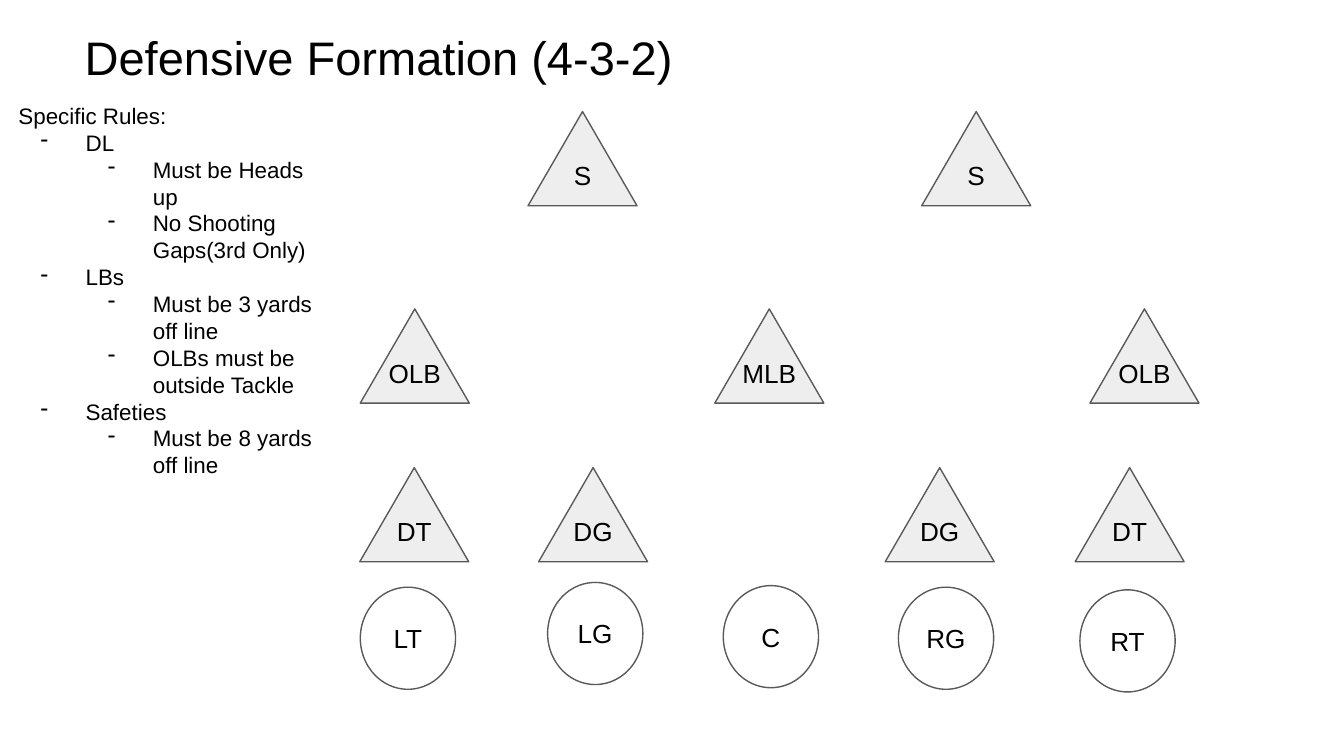
from typing import NamedTuple

import pptx
import pptx.dml.color
import pptx.enum.shapes
import pptx.enum.text
import pptx.oxml
import pptx.oxml.ns
import pptx.util
from pptx.util import Cm

COLORS = {"text": "000000", "outline": "595959", "defender": "EEEEEE"}
FONT = "Arial"
INSET = Cm(0.25)
DEFENDER_WIDTH, DEFENDER_HEIGHT = 2.06, 1.78
LABEL_WIDTH, LABEL_HEIGHT = 1.73, 1.12
LINEMAN_WIDTH, LINEMAN_HEIGHT = 1.8, 1.93


class Player(NamedTuple):
    label: str
    left: float
    top: float


class Rule(NamedTuple):
    text: str
    level: int  # 0 heading, 1 position, 2 requirement


SAFETY_TOP, LINEBACKER_TOP, LINE_TOP = 2.11, 5.84, 8.84
DEFENDERS = [
    Player("S", 9.98, SAFETY_TOP),
    Player("S", 17.42, SAFETY_TOP),
    Player("OLB", 6.81, LINEBACKER_TOP),
    Player("MLB", 13.51, LINEBACKER_TOP),
    Player("OLB", 20.6, LINEBACKER_TOP),
    Player("DT", 6.8, LINE_TOP),
    Player("DG", 10.18, LINE_TOP),
    Player("DG", 16.73, LINE_TOP),
    Player("DT", 20.32, LINE_TOP),
]
LINEMEN = [
    Player("LT", 6.81, 11.1),
    Player("LG", 10.35, 11.01),
    Player("C", 13.67, 11.07),
    Player("RG", 16.98, 11.1),
    Player("RT", 20.41, 11.15),
]
RULES = [
    Rule("Specific Rules:", 0),
    Rule("DL", 1),
    Rule("Must be Heads up", 2),
    Rule("No Shooting Gaps(3rd Only)", 2),
    Rule("LBs", 1),
    Rule("Must be 3 yards off line", 2),
    Rule("OLBs must be outside Tackle", 2),
    Rule("Safeties", 1),
    Rule("Must be 8 yards off line", 2),
]


def color(name: str) -> pptx.dml.color.RGBColor:
    return pptx.dml.color.RGBColor.from_string(COLORS[name])


def style_paragraph(paragraph, size: float, centered: bool = False) -> None:
    paragraph.font.name = FONT
    paragraph.font.size = pptx.util.Pt(size)
    paragraph.font.color.rgb = color("text")
    if centered:
        paragraph.alignment = pptx.enum.text.PP_ALIGN.CENTER


def prepare_frame(shape, anchor):
    frame = shape.text_frame
    frame.word_wrap = True
    frame.vertical_anchor = anchor
    frame.margin_left = frame.margin_right = INSET
    frame.margin_top = frame.margin_bottom = INSET
    return frame


def add_text_box(slide, left: float, top: float, width: float, height: float,
                 anchor=pptx.enum.text.MSO_ANCHOR.TOP):
    box = slide.shapes.add_textbox(Cm(left), Cm(top), Cm(width), Cm(height))
    return prepare_frame(box, anchor)


def add_outlined_shape(slide, kind, player: Player, width: float, height: float):
    shape = slide.shapes.add_shape(
        kind, Cm(player.left), Cm(player.top), Cm(width), Cm(height))
    shape.shadow.inherit = False
    shape.line.color.rgb = color("outline")
    shape.line.width = pptx.util.Pt(0.75)
    return shape


def add_defender(slide, player: Player) -> None:
    triangle = add_outlined_shape(
        slide, pptx.enum.shapes.MSO_SHAPE.FLOWCHART_EXTRACT, player,
        DEFENDER_WIDTH, DEFENDER_HEIGHT)
    triangle.fill.solid()
    triangle.fill.fore_color.rgb = color("defender")
    frame = add_text_box(
        slide, player.left + (DEFENDER_WIDTH - LABEL_WIDTH) / 2,
        player.top + DEFENDER_HEIGHT - LABEL_HEIGHT, LABEL_WIDTH, LABEL_HEIGHT)
    frame.text = player.label
    style_paragraph(frame.paragraphs[0], 14, centered=True)


def add_lineman(slide, player: Player) -> None:
    circle = add_outlined_shape(
        slide, pptx.enum.shapes.MSO_SHAPE.OVAL, player,
        LINEMAN_WIDTH, LINEMAN_HEIGHT)
    circle.fill.background()
    frame = prepare_frame(circle, pptx.enum.text.MSO_ANCHOR.MIDDLE)
    frame.text = player.label
    style_paragraph(frame.paragraphs[0], 14, centered=True)


def add_dash(paragraph, level: int) -> None:
    properties = paragraph._p.get_or_add_pPr()
    properties.set("marL", str(Cm(1.27 * level)))
    properties.set("indent", str(Cm(-0.85)))
    namespace = pptx.oxml.ns.nsdecls("a")
    properties.append(pptx.oxml.parse_xml(
        f'<a:buClr {namespace}><a:srgbClr val="{COLORS["text"]}"/></a:buClr>'))
    properties.append(pptx.oxml.parse_xml(f'<a:buChar {namespace} char="-"/>'))


def add_rules(slide, rules: list[Rule]) -> None:
    frame = add_text_box(slide, 0.1, 1.68, 6.45, 7.7)
    for index, rule in enumerate(rules):
        paragraph = frame.add_paragraph() if index else frame.paragraphs[0]
        paragraph.text = rule.text
        if rule.level:
            paragraph.level = rule.level - 1
            add_dash(paragraph, rule.level)
        style_paragraph(paragraph, 12)


def main() -> None:
    presentation = pptx.Presentation()
    presentation.slide_width = Cm(25.4)
    presentation.slide_height = Cm(14.29)
    slide = presentation.slides.add_slide(presentation.slide_layouts[6])

    # Title
    title = add_text_box(slide, 1.35, 0.25, 23.67, 1.6,
                         pptx.enum.text.MSO_ANCHOR.BOTTOM)
    title.text = "Defensive Formation (4-3-2)"
    style_paragraph(title.paragraphs[0], 25.2)

    # Defense
    for defender in DEFENDERS:
        add_defender(slide, defender)

    # Rules for each position
    add_rules(slide, RULES)

    # Offensive line
    for lineman in LINEMEN:
        add_lineman(slide, lineman)

    presentation.save("out.pptx")


if __name__ == "__main__":
    main()
